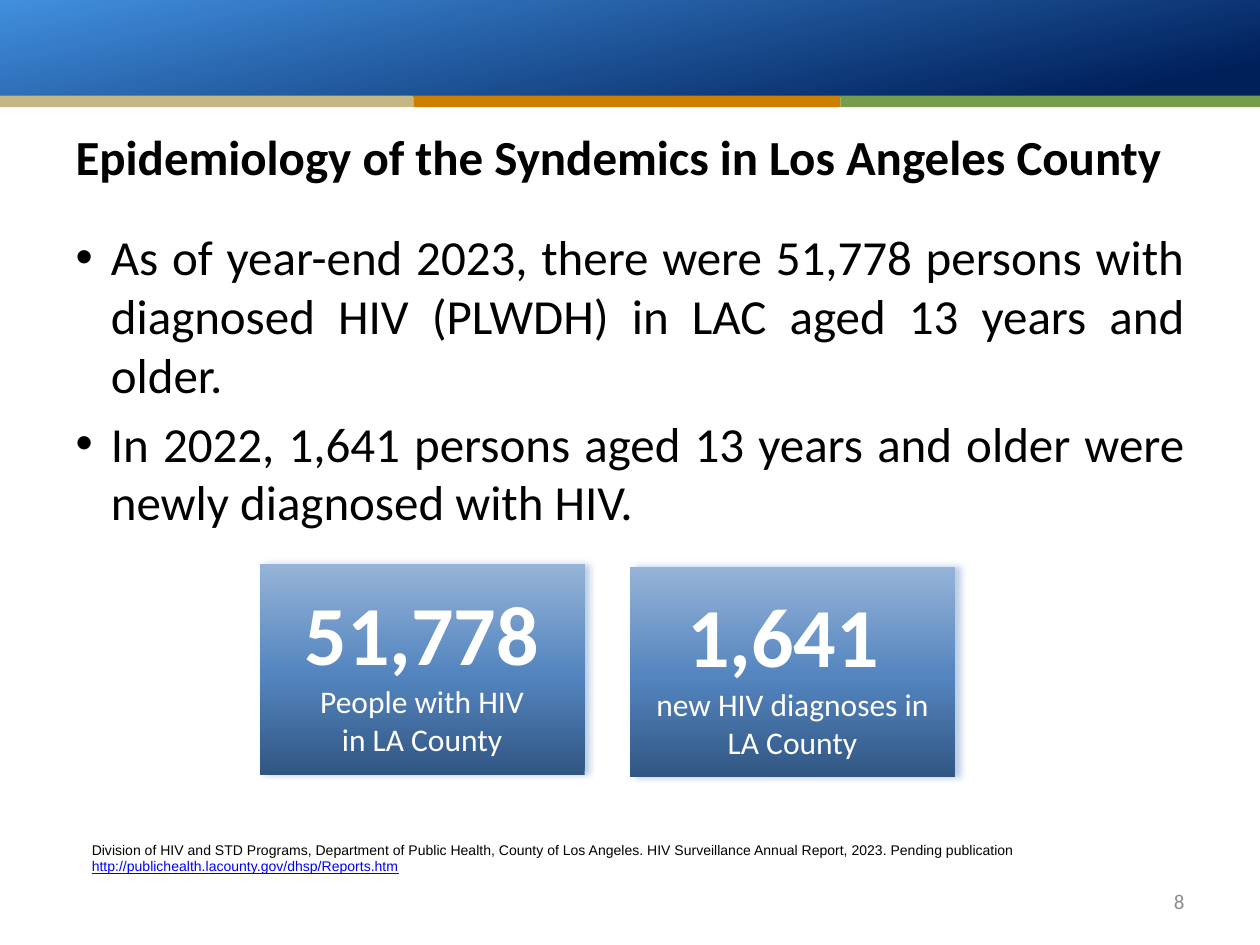
from lxml import etree
from pptx import Presentation
from pptx.dml.color import RGBColor
from pptx.enum.shapes import MSO_SHAPE
from pptx.enum.text import MSO_ANCHOR, MSO_AUTO_SIZE, PP_ALIGN
from pptx.oxml import parse_xml
from pptx.oxml.ns import nsdecls, qn
from pptx.util import Pt

PX = 9144  # 100 px to the inch

BLACK = RGBColor(0x00, 0x00, 0x00)
WHITE = RGBColor(0xFF, 0xFF, 0xFF)
GRAY = RGBColor(0x8C, 0x8C, 0x8C)
LINK = RGBColor(0x00, 0x00, 0xFF)
NAVY = RGBColor(0x00, 0x20, 0x5B)
SKY = RGBColor(0x41, 0x8F, 0xDE)
SAND = RGBColor(0xC5, 0xB7, 0x83)
ORANGE = RGBColor(0xCF, 0x7F, 0x00)
GREEN = RGBColor(0x78, 0x9D, 0x4A)
CARD_DARK = RGBColor(0x31, 0x56, 0x83)
CARD_MID = RGBColor(0x54, 0x85, 0xBF)
CARD_LIGHT = RGBColor(0x95, 0xB3, 0xD7)
CARD_SHADOW = RGBColor(0x4F, 0x81, 0xBD)


def emu(box):
    return [value * PX for value in box]


def set_all(target, formats):
    for name, value in formats.items():
        setattr(target, name, value)


def place(shape, box):
    set_all(shape, dict(zip(("left", "top", "width", "height"), emu(box))))


def add_run(paragraph, text, size, color, name="Calibri", bold=False):
    run = paragraph.add_run()
    run.text = text
    set_all(run.font, {"size": Pt(size), "name": name, "bold": bold})
    run.font.color.rgb = color
    return run


def add_rectangle(slide, box, color=None):
    shape = slide.shapes.add_shape(MSO_SHAPE.RECTANGLE, *emu(box))
    shape.shadow.inherit = False
    shape.line.fill.background()
    if color is not None:
        shape.fill.solid()
        shape.fill.fore_color.rgb = color
    return shape


def add_text_box(slide, box, anchor=MSO_ANCHOR.TOP):
    frame = slide.shapes.add_textbox(*emu(box)).text_frame
    set_all(frame, {"word_wrap": True, "vertical_anchor": anchor})
    return frame.paragraphs[0]


def set_gradient(shape, stops, angle):
    """Fill with (percent, color) stops along a clockwise angle."""
    stop_xml = "".join(
        f'<a:gs pos="{percent * 1000}"><a:srgbClr val="{color}"/></a:gs>'
        for percent, color in stops)
    properties = shape.fill._xPr
    properties.find(qn("a:prstGeom")).addnext(parse_xml(
        f'<a:gradFill {nsdecls("a")} rotWithShape="1"><a:gsLst>{stop_xml}</a:gsLst>'
        f'<a:lin ang="{angle * 60000}" scaled="0"/></a:gradFill>'))


def set_shadow(shape, color, alpha, blur, distance):
    effects = shape.fill._xPr.find(qn("a:effectLst"))
    effects.append(parse_xml(
        f'<a:outerShdw {nsdecls("a")} blurRad="{Pt(blur)}" dist="{Pt(distance)}" '
        f'dir="0" algn="l" rotWithShape="0"><a:srgbClr val="{color}">'
        f'<a:alpha val="{alpha * 1000}"/></a:srgbClr></a:outerShdw>'))


def add_banner(slide, box):
    left, top, width, height = box
    band = add_rectangle(slide, (left, top, width, height - 8))
    set_gradient(band, [(9, NAVY), (100, SKY)], 258)
    # Three stripes share the width below the band
    stripe = width / 3
    for index, color in enumerate((SAND, ORANGE, GREEN)):
        start = round(left + index * stripe)
        end = round(left + (index + 1) * stripe)
        # The first stripe stops a little early
        start, end = start - 5 * (index == 1), end - 5 * (index == 0)
        add_rectangle(slide, (start, top + height - 9, end - start, 9), color)


def fill_title(title, box, text):
    place(title, box)
    frame = title.text_frame
    set_all(frame, {"vertical_anchor": MSO_ANCHOR.MIDDLE, "word_wrap": True,
                    "auto_size": MSO_AUTO_SIZE.NONE})
    paragraph = frame.paragraphs[0]
    paragraph.alignment = PP_ALIGN.LEFT
    add_run(paragraph, text, 28, BLACK, bold=True)


def fill_bullets(body, box, items):
    place(body, box)
    frame = body.text_frame
    set_all(frame, {"word_wrap": True, "auto_size": MSO_AUTO_SIZE.NONE})
    for index, text in enumerate(items):
        paragraph = frame.add_paragraph() if index else frame.paragraphs[0]
        set_all(paragraph, {"alignment": PP_ALIGN.JUSTIFY,
                            "space_before": Pt(5.6 if index else 0)})
        properties = paragraph._p.get_or_add_pPr()
        properties.set("marL", str(28 * PX))
        properties.set("indent", str(-28 * PX))
        etree.SubElement(properties, qn("a:buFont")).set("typeface", "Arial")
        etree.SubElement(properties, qn("a:buChar")).set("char", "•")
        add_run(paragraph, text, 28, BLACK)


def add_card(slide, box, figure, captions):
    card = add_rectangle(slide, box)
    set_gradient(card, [(0, CARD_DARK), (48, CARD_MID), (100, CARD_LIGHT)], 270)
    set_shadow(card, CARD_SHADOW, 40, 4, 3)
    frame = card.text_frame
    set_all(frame, {"word_wrap": True, "vertical_anchor": MSO_ANCHOR.MIDDLE})
    paragraph = frame.paragraphs[0]
    paragraph.alignment = PP_ALIGN.CENTER
    add_run(paragraph, figure, 48, WHITE, bold=True)
    for caption in captions:
        paragraph = frame.add_paragraph()
        paragraph.alignment = PP_ALIGN.CENTER
        add_run(paragraph, caption, 18, WHITE)


def add_source(slide, box, text, address):
    paragraph = add_text_box(slide, box)
    set_all(paragraph, {"line_spacing": Pt(9), "space_after": Pt(1)})
    add_run(paragraph, text, 8, BLACK, "Arial")
    add_run(paragraph, address, 8, LINK, "Arial").font.underline = True


def add_slide_number(slide, box, number):
    paragraph = add_text_box(slide, box, MSO_ANCHOR.MIDDLE)
    paragraph.alignment = PP_ALIGN.RIGHT
    add_run(paragraph, number, 12, GRAY)


def main():
    presentation = Presentation()
    set_all(presentation, {"slide_width": 1000 * PX, "slide_height": 750 * PX})
    slide = presentation.slides.add_slide(presentation.slide_layouts[1])

    add_banner(slide, (0, 0, 1000, 85))
    fill_title(slide.shapes.title, (50, 89, 900, 69),
               "Epidemiology of the Syndemics in Los Angeles County")
    fill_bullets(slide.placeholders[1], (50, 175, 900, 458), [
        "As of year-end 2023, there were 51,778 persons with diagnosed HIV (PLWDH) "
        "in LAC aged 13 years and older.",
        "In 2022, 1,641 persons aged 13 years and older were newly diagnosed with HIV.",
    ])
    add_card(slide, (206, 448, 258, 167), "51,778", ["People with HIV", "in LA County"])
    add_card(slide, (500, 450, 258, 167), "1,641 ", ["new HIV diagnoses in LA County"])
    add_source(slide, (63, 664, 815, 62),
               "Division of HIV and STD Programs, Department of Public Health, County of "
               "Los Angeles. HIV Surveillance Annual Report, 2023. Pending publication ",
               "http://publichealth.lacounty.gov/dhsp/Reports.htm")
    add_slide_number(slide, (892, 695, 58, 40), "8")
    presentation.save("out.pptx")


if __name__ == "__main__":
    main()
